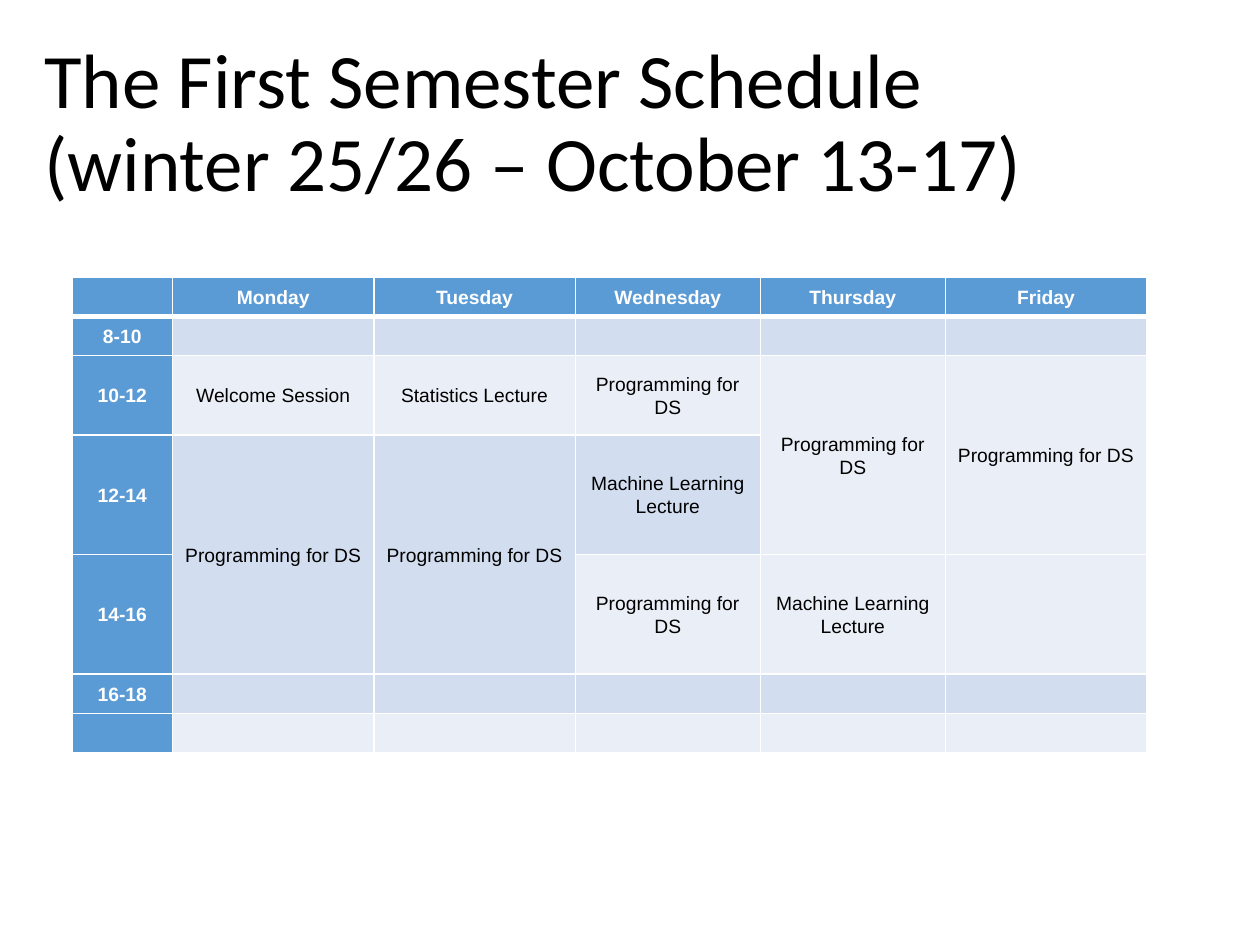
import pptx
import pptx.dml.color
import pptx.enum.text
import pptx.oxml
import pptx.oxml.ns
import pptx.util

Cm, Pt = pptx.util.Cm, pptx.util.Pt
RGB = pptx.dml.color.RGBColor.from_string
ALIGN = pptx.enum.text.PP_ALIGN
MIDDLE = pptx.enum.text.MSO_ANCHOR.MIDDLE

# Content: "" is a free slot, None continues the cell above
TITLE = ["The First Semester Schedule", "(winter 25/26 – October 13-17)"]
DS, ML = "Programming for DS", "Machine Learning Lecture"
SCHEDULE = [
    ["", "Monday", "Tuesday", "Wednesday", "Thursday", "Friday"],
    ["8-10", "", "", "", "", ""],
    ["10-12", "Welcome Session", "Statistics Lecture", DS, DS, DS],
    ["12-14", DS, DS, ML, None, None],
    ["14-16", None, None, DS, ML, ""],
    ["16-18", "", "", "", "", ""],
    ["", "", "", "", "", ""],
]

# Layout in centimetres
SLIDE = (25.4, 19.05)
TITLE_BOX = (0.64, 0.69, 21.89, 3.68)
TABLE_AT = (1.45, 5.59)
COLS = [2.03, 4.06, 4.06, 3.73, 3.73, 4.06]
ROWS = [0.79, 0.79, 1.6, 2.41, 2.41, 0.79, 0.79]

THEME = {
    "head": "5B9BD5",
    "bands": ("EAEFF7", "D2DEEF"),
    "border": "FFFFFF",
    "title": {"name": "Calibri", "size": Pt(44), "bold": False, "color": "000000"},
    "label": {"name": "Arial", "size": Pt(11), "bold": True, "color": "FFFFFF"},
    "entry": {"name": "Arial", "size": Pt(11), "bold": False, "color": "000000"},
}
TITLE_PARA = {"line_spacing": 0.9, "alignment": ALIGN.LEFT}
CELL_PARA = {"line_spacing": 1.07, "space_after": Pt(8), "alignment": ALIGN.CENTER}
CELL_FORMAT = {"vertical_anchor": MIDDLE, "margin_left": Cm(0.18),
               "margin_right": Cm(0.18), "margin_top": 0, "margin_bottom": 0}


def apply(obj, values):
    for name, value in values.items():
        if name == "color":
            obj.color.rgb = RGB(value)
        else:
            setattr(obj, name, value)


def write(p, lines, font, para):
    apply(p, para)
    for i, line in enumerate(lines):
        if i:
            p.add_line_break()
        r = p.add_run()
        r.text = line
        apply(r.font, THEME[font])


def set_borders(cell, widths):
    tc_pr = cell._tc.get_or_add_tcPr()
    for side, width in widths.items():
        tc_pr.append(pptx.oxml.parse_xml(
            f'<a:ln{side} {pptx.oxml.ns.nsdecls("a")} w="{Pt(width)}"><a:solidFill>'
            f'<a:srgbClr val="{THEME["border"]}"/></a:solidFill></a:ln{side}>'))


def add_title(slide):
    sp = slide.shapes.add_textbox(*map(Cm, TITLE_BOX))
    tf = sp.text_frame
    apply(tf, {"word_wrap": True, "vertical_anchor": MIDDLE})
    write(tf.paragraphs[0], TITLE, "title", TITLE_PARA)


def add_schedule(slide):
    size = (sum(COLS), sum(ROWS))
    table = slide.shapes.add_table(len(ROWS), len(COLS),
                                   *map(Cm, TABLE_AT + size)).table
    for col, width in zip(table.columns, COLS):
        col.width = Cm(width)
    for row, height in zip(table.rows, ROWS):
        row.height = Cm(height)

    for i, row in enumerate(SCHEDULE):
        for j, text in enumerate(row):
            cell = table.cell(i, j)
            label = i == 0 or j == 0
            # Thick rule between the header row and the body
            set_borders(cell, {"L": 1, "R": 1, "T": 3 if i == 1 else 1,
                               "B": 3 if i == 0 else 1})
            cell.fill.solid()
            cell.fill.fore_color.rgb = RGB(THEME["head"] if label else THEME["bands"][i % 2])
            apply(cell, CELL_FORMAT)
            if text:
                write(cell.text_frame.paragraphs[0], [text],
                      "label" if label else "entry", CELL_PARA)
            elif text is None:
                table.cell(i - 1, j).merge(cell)


def main():
    prs = pptx.Presentation()
    prs.slide_width, prs.slide_height = map(Cm, SLIDE)
    slide = prs.slides.add_slide(prs.slide_layouts[6])
    add_title(slide)
    add_schedule(slide)
    prs.save("out.pptx")


if __name__ == "__main__":
    main()
